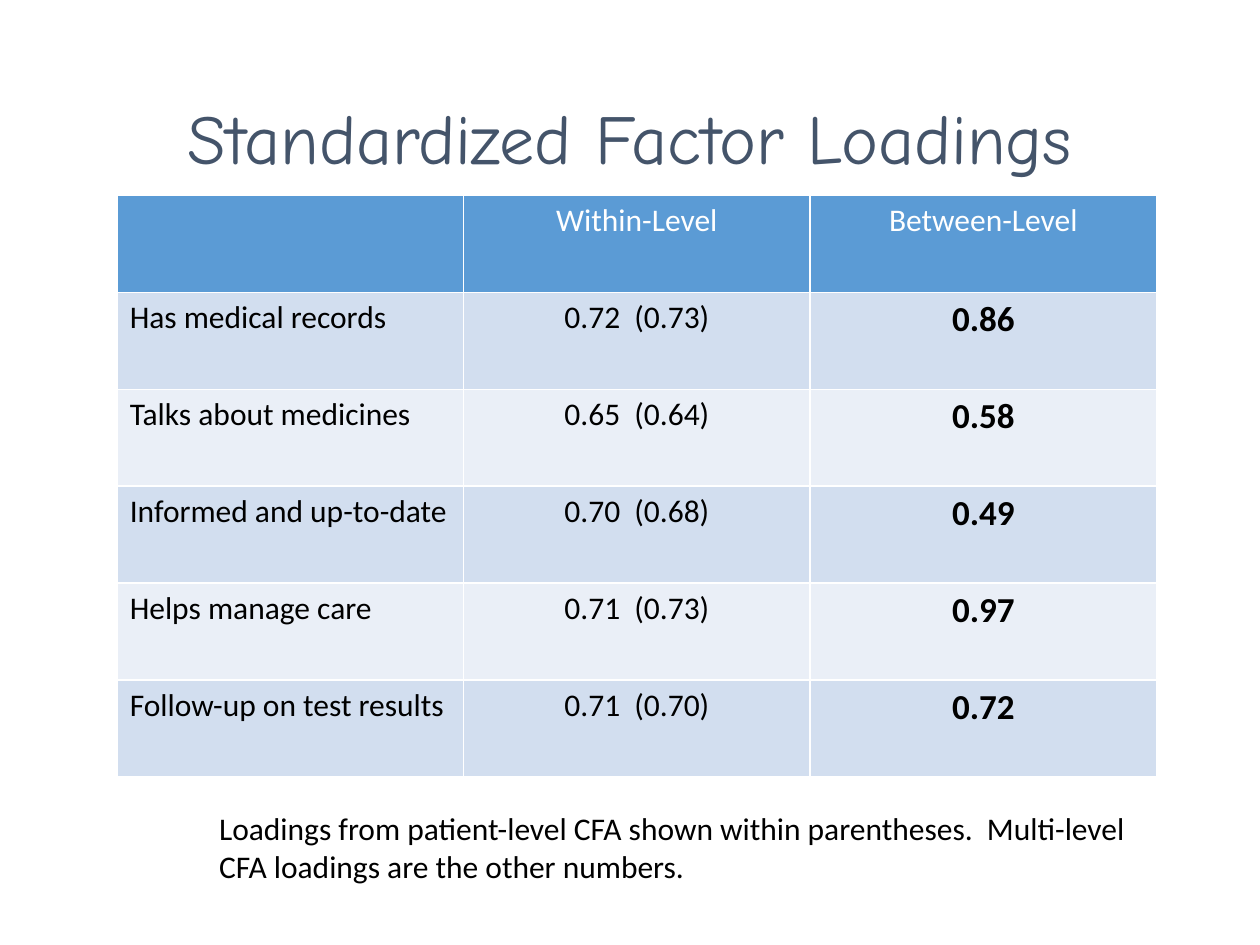
from pptx import Presentation
from pptx.dml.color import RGBColor
from pptx.enum.text import MSO_ANCHOR, MSO_AUTO_SIZE, PP_ALIGN as Align
from pptx.util import Inches, Pt

SLATE = RGBColor(0x44, 0x54, 0x6A)
BLUE = RGBColor(0x5B, 0x9B, 0xD5)
BAND_DARK = RGBColor(0xD2, 0xDE, 0xEF)
BAND_LIGHT = RGBColor(0xEA, 0xEF, 0xF7)
WHITE = RGBColor(0xFF, 0xFF, 0xFF)
BLACK = RGBColor(0x00, 0x00, 0x00)

LOADINGS = [
    ("", "Within-Level", "Between-Level"),
    ("Has medical records", "0.72  (0.73)", "0.86"),
    ("Talks about medicines", "0.65  (0.64)", "0.58"),
    ("Informed and up-to-date", "0.70  (0.68)", "0.49"),
    ("Helps manage care", "0.71  (0.73)", "0.97"),
    ("Follow-up on test results", "0.71  (0.70)", "0.72"),
]


class SlideBuilder:
    title_font = "Comic Neue"
    body_font = "Calibri"

    def __init__(self, prs):
        self.s = prs.slides.add_slide(prs.slide_layouts[5])

    def format(self, p, size, color, font=body_font, bold=False, align=Align.LEFT):
        p.alignment = align
        for r in p.runs:
            r.font.name = font
            r.font.size = Pt(size)
            r.font.bold = bold
            r.font.color.rgb = color

    def title(self, text, x, y, w, h):
        sp = self.s.shapes.title
        sp.left, sp.top, sp.width, sp.height = map(Inches, (x, y, w, h))
        tf = sp.text_frame
        tf.text = text
        tf.vertical_anchor = MSO_ANCHOR.MIDDLE
        p = tf.paragraphs[0]
        p.line_spacing = 0.9
        self.format(p, 40, SLATE, self.title_font, align=Align.CENTER)

    def table(self, rows, x, y, w, h):
        frame = self.s.shapes.add_table(
            len(rows), len(rows[0]), Inches(x), Inches(y), Inches(w), Inches(h)
        )
        for i, row in enumerate(rows):
            for j, text in enumerate(row):
                cell = frame.table.cell(i, j)
                cell.text = text
                cell.fill.solid()
                band = BAND_DARK if i % 2 else BAND_LIGHT
                cell.fill.fore_color.rgb = band if i else BLUE
                strong = i > 0 and j == 2
                self.format(
                    cell.text_frame.paragraphs[0],
                    20 if strong else 18,
                    BLACK if i else WHITE,
                    bold=strong,
                    align=Align.CENTER if j else Align.LEFT,
                )

    def note(self, lines, x, y, w, h):
        sp = self.s.shapes.add_textbox(Inches(x), Inches(y), Inches(w), Inches(h))
        tf = sp.text_frame
        tf.word_wrap = False
        tf.auto_size = MSO_AUTO_SIZE.SHAPE_TO_FIT_TEXT
        tf.text = "\n".join(lines)
        for p in tf.paragraphs:
            self.format(p, 18, BLACK)


def main():
    prs = Presentation()
    prs.slide_width, prs.slide_height = Inches(10), Inches(7.5)
    slide = SlideBuilder(prs)
    slide.title("Standardized Factor Loadings", 0.69, 0.4, 8.62, 1.45)
    slide.table(LOADINGS, 0.93, 1.55, 8.25, 4.62)
    slide.note(
        [
            "Loadings from patient-level CFA shown within parentheses.  Multi-level",
            "CFA loadings are the other numbers.",
        ],
        1.64, 6.37, 7.49, 0.71,
    )
    prs.save("out.pptx")


if __name__ == "__main__":
    main()
